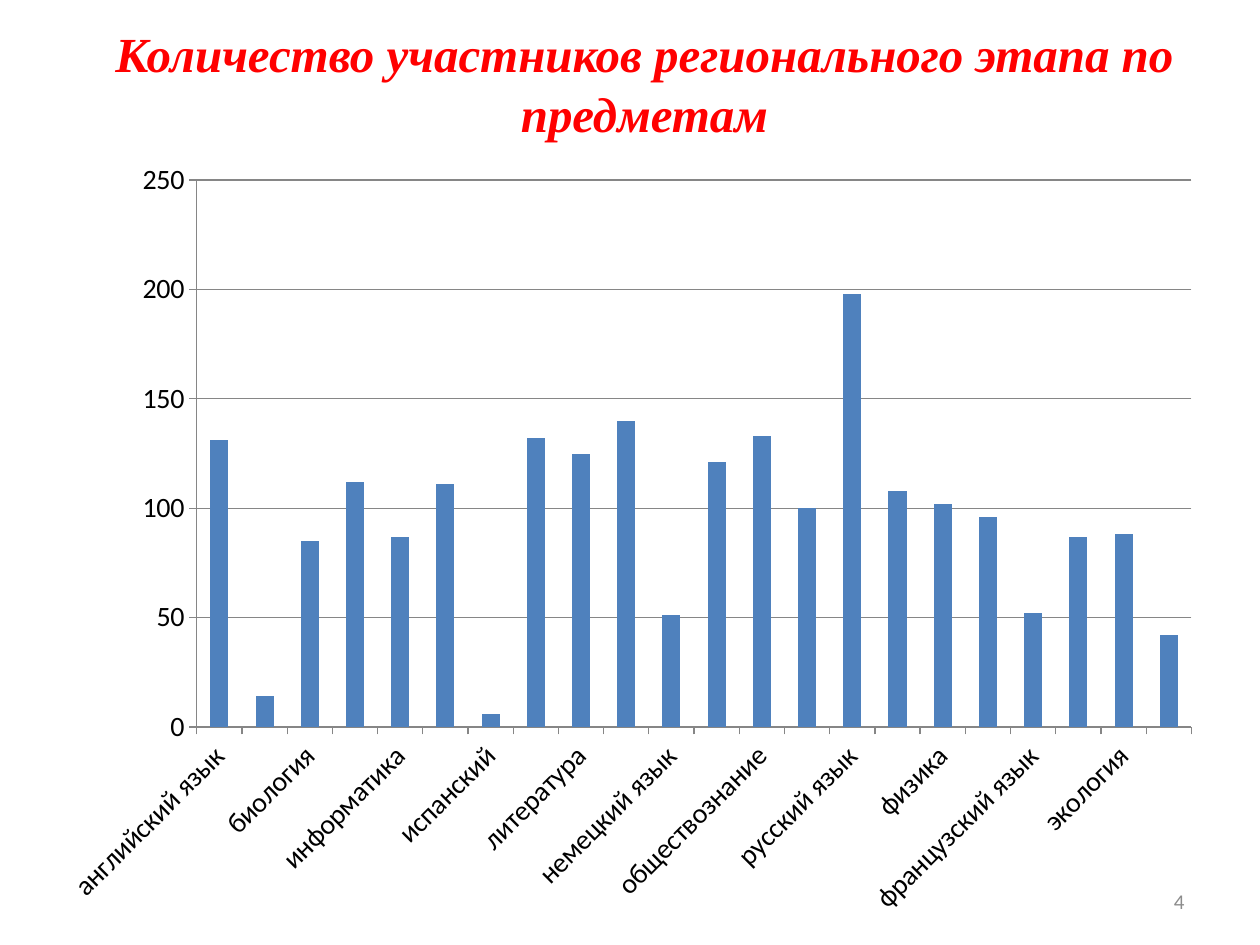
from pptx import Presentation
from pptx.chart import data as cd
from pptx.dml.color import RGBColor
from pptx.enum import chart as ch, text
from pptx.util import Pt

COLORS = {"title": "FF0000", "bar": "4F81BD", "line": "868686", "text": "000000", "number": "8C8C8C"}
PARTICIPANTS = {
    "английский язык": 131, "астрономия": 14, "биология": 85, "география": 112,
    "информатика": 87, "искусство": 111, "испанский": 6, "история": 132,
    "литература": 125, "математика": 140, "немецкий язык": 51, "ОБЖ": 121,
    "обществознание": 133, "право": 100, "русский язык": 198, "технология": 108,
    "физика": 102, "физическая культура": 96, "французский язык": 52,
    "химия": 87, "экология": 88, "экономика": 42,
}


def rgb(name):
    """Return the palette colour with the given name."""
    return RGBColor.from_string(COLORS[name])


def add_text(s, box, content, *, size, font, color, align, anchor=text.MSO_ANCHOR.TOP,
             bold=False, italic=False, spacing=None):
    """Add a wrapped text box with one formatted paragraph."""
    tf = s.shapes.add_textbox(*map(Pt, box)).text_frame
    tf.word_wrap = True
    tf.vertical_anchor = anchor
    p = tf.paragraphs[0]
    p.alignment = align
    if spacing:
        p.line_spacing = Pt(spacing)
    r = p.add_run()
    r.text = content
    r.font.size, r.font.name = Pt(size), font
    r.font.bold, r.font.italic = bold, italic
    r.font.color.rgb = rgb(color)


def add_title(s, box):
    """Add the centred slide title."""
    add_text(s, box, "Количество участников регионального этапа по предметам",
             size=28, font="Times New Roman", color="title", bold=True, italic=True,
             align=text.PP_ALIGN.CENTER, spacing=34.2)


def add_participants_chart(s, box):
    """Add the column chart of participants by subject."""
    data = cd.CategoryChartData()
    data.categories = list(PARTICIPANTS)
    data.add_series("Участники", list(PARTICIPANTS.values()))
    chart = s.shapes.add_chart(ch.XL_CHART_TYPE.COLUMN_CLUSTERED, *map(Pt, box), data).chart
    chart.has_legend = chart.has_title = False
    chart.font.name, chart.font.size = "Calibri", Pt(10)
    chart.font.color.rgb = rgb("text")

    plot = chart.plots[0]
    plot.gap_width, plot.vary_by_categories = 150, False
    fill = plot.series[0].format.fill
    fill.solid()
    fill.fore_color.rgb = rgb("bar")

    value_axis, category_axis = chart.value_axis, chart.category_axis
    value_axis.minimum_scale, value_axis.maximum_scale, value_axis.major_unit = 0, 250, 50
    value_axis.has_major_gridlines = True
    for axis in (value_axis, category_axis):
        axis.major_tick_mark = ch.XL_TICK_MARK.OUTSIDE
        font = axis.tick_labels.font
        font.size, font.name = Pt(16), "Calibri"
        font.color.rgb = rgb("text")
    for part in (value_axis, category_axis, value_axis.major_gridlines):
        part.format.line.color.rgb = rgb("line")
        part.format.line.width = Pt(0.75)
    category_axis._element.txPr.bodyPr.set("rot", "-2700000")


def add_slide_number(s, box):
    """Add the slide number at the lower right."""
    add_text(s, box, "4", size=12, font="Calibri", color="number",
             align=text.PP_ALIGN.RIGHT, anchor=text.MSO_ANCHOR.MIDDLE)


def main():
    """Build and save the presentation."""
    prs = Presentation()
    prs.slide_width, prs.slide_height = Pt(720), Pt(540)
    s = prs.slides.add_slide(prs.slide_layouts[6])
    add_slide_number(s, (516, 500.5, 168, 28.8))
    add_participants_chart(s, (25.2, 84.2, 669, 448))
    add_title(s, (25.2, 9.4, 686, 75))
    prs.save("out.pptx")


if __name__ == "__main__":
    main()
